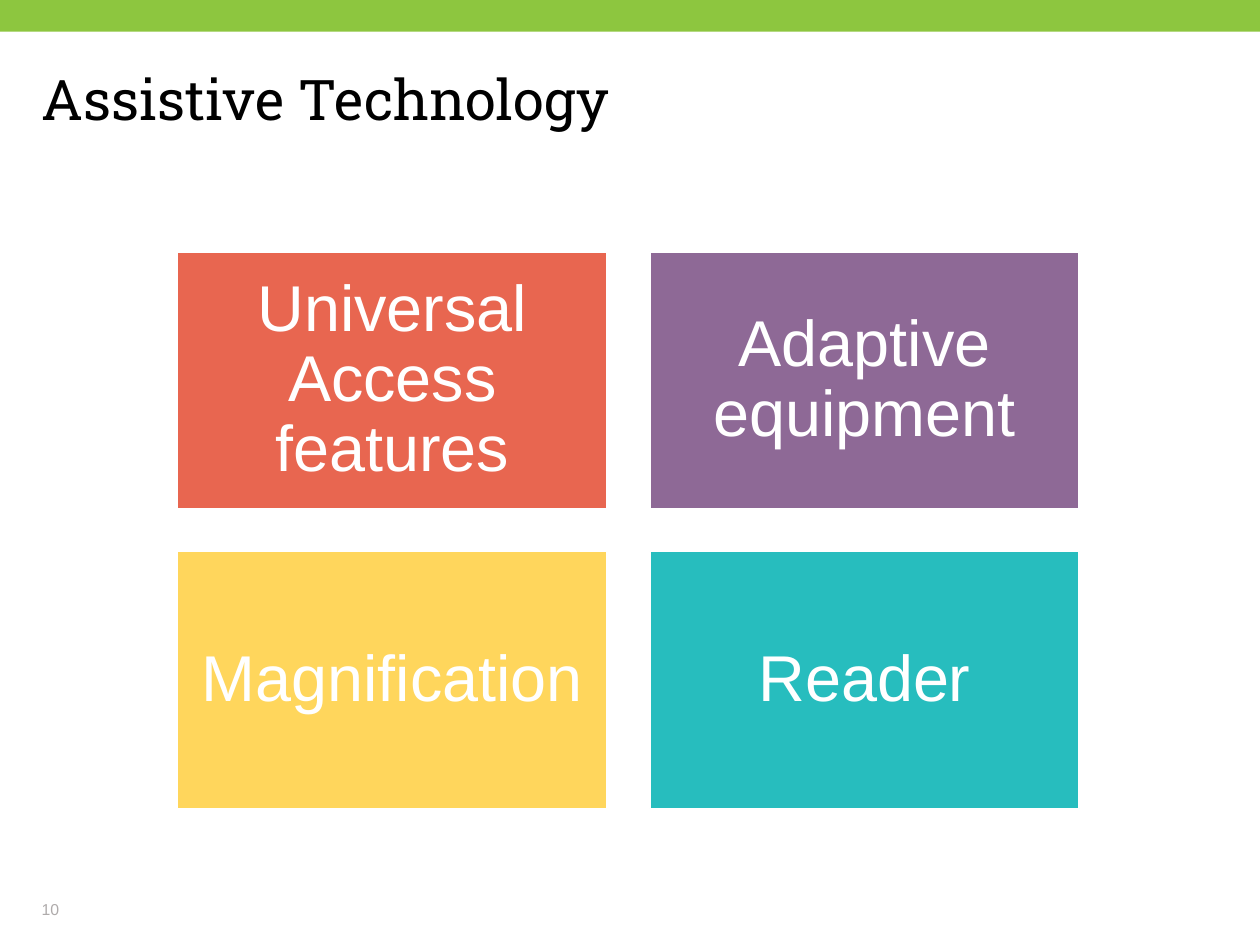
from dataclasses import dataclass

from pptx import Presentation
from pptx import util as u
from pptx.dml import color
from pptx.enum import shapes, text


@dataclass
class Tile:
    label: str
    fill: str


TILES = [
    Tile("Universal Access features", "E86650"),
    Tile("Adaptive equipment", "8E6996"),
    Tile("Magnification", "FFD65C"),
    Tile("Reader", "27BDBE"),
]
COLUMNS = 2
GRID_LEFT, GRID_TOP = 3.58, 5.08
TILE_WIDTH, TILE_HEIGHT = 8.66, 5.18
GAP = 0.86


def rgb(value: str) -> color.RGBColor:
    return color.RGBColor.from_string(value)


def add_rectangle(slide, left: float, top: float, width: float, height: float, fill: str):
    """Add a plain rectangle without line or shadow, measured in centimetres."""
    box = slide.shapes.add_shape(
        shapes.MSO_SHAPE.RECTANGLE, u.Cm(left), u.Cm(top), u.Cm(width), u.Cm(height)
    )
    box.shadow.inherit = False
    box.fill.solid()
    box.fill.fore_color.rgb = rgb(fill)
    box.line.fill.background()
    return box


def write(box, words: str, font: str, size: float, ink: str, align, anchor,
          inset: float = 0, spacing: float = 1.0) -> None:
    """Fill a box with one formatted paragraph."""
    frame = box.text_frame
    frame.word_wrap = True
    frame.auto_size = text.MSO_AUTO_SIZE.NONE
    frame.vertical_anchor = anchor
    frame.margin_left = frame.margin_right = u.Cm(inset)
    frame.margin_top = frame.margin_bottom = u.Cm(inset)
    para = frame.paragraphs[0]
    para.text = words
    para.alignment = align
    para.line_spacing = spacing
    para.font.name = font
    para.font.size = u.Pt(size)
    para.font.color.rgb = rgb(ink)


def add_tile(slide, tile: Tile, index: int) -> None:
    row, column = divmod(index, COLUMNS)
    box = add_rectangle(
        slide,
        GRID_LEFT + column * (TILE_WIDTH + GAP),
        GRID_TOP + row * (TILE_HEIGHT + GAP),
        TILE_WIDTH, TILE_HEIGHT, tile.fill,
    )
    box.line.color.rgb = rgb("FFFFFF")
    box.line.width = u.Pt(1)
    write(box, tile.label, "Arial", 37, "FFFFFF", text.PP_ALIGN.CENTER,
          text.MSO_ANCHOR.MIDDLE, inset=0.38, spacing=0.9)


def main() -> None:
    deck = Presentation()
    deck.slide_width, deck.slide_height = u.Cm(25.4), u.Cm(19.05)
    slide = deck.slides.add_slide(deck.slide_layouts[5])

    add_rectangle(slide, 0, 0, 25.4, 0.64, "8DC63F")

    title = slide.shapes.title
    title.left, title.top = u.Cm(0.84), u.Cm(1.45)
    title.width, title.height = u.Cm(23.65), u.Cm(3.23)
    write(title, "Assistive Technology", "Roboto Slab", 32, "000000",
          text.PP_ALIGN.LEFT, text.MSO_ANCHOR.TOP, spacing=0.9)

    for index, tile in enumerate(TILES):
        add_tile(slide, tile, index)

    page_number = slide.shapes.add_textbox(u.Cm(0.84), u.Cm(17.91), u.Cm(5.72), u.Cm(0.61))
    write(page_number, "10", "Arial", 9, "AFABAB",
          text.PP_ALIGN.LEFT, text.MSO_ANCHOR.BOTTOM)

    deck.save("out.pptx")


if __name__ == "__main__":
    main()
